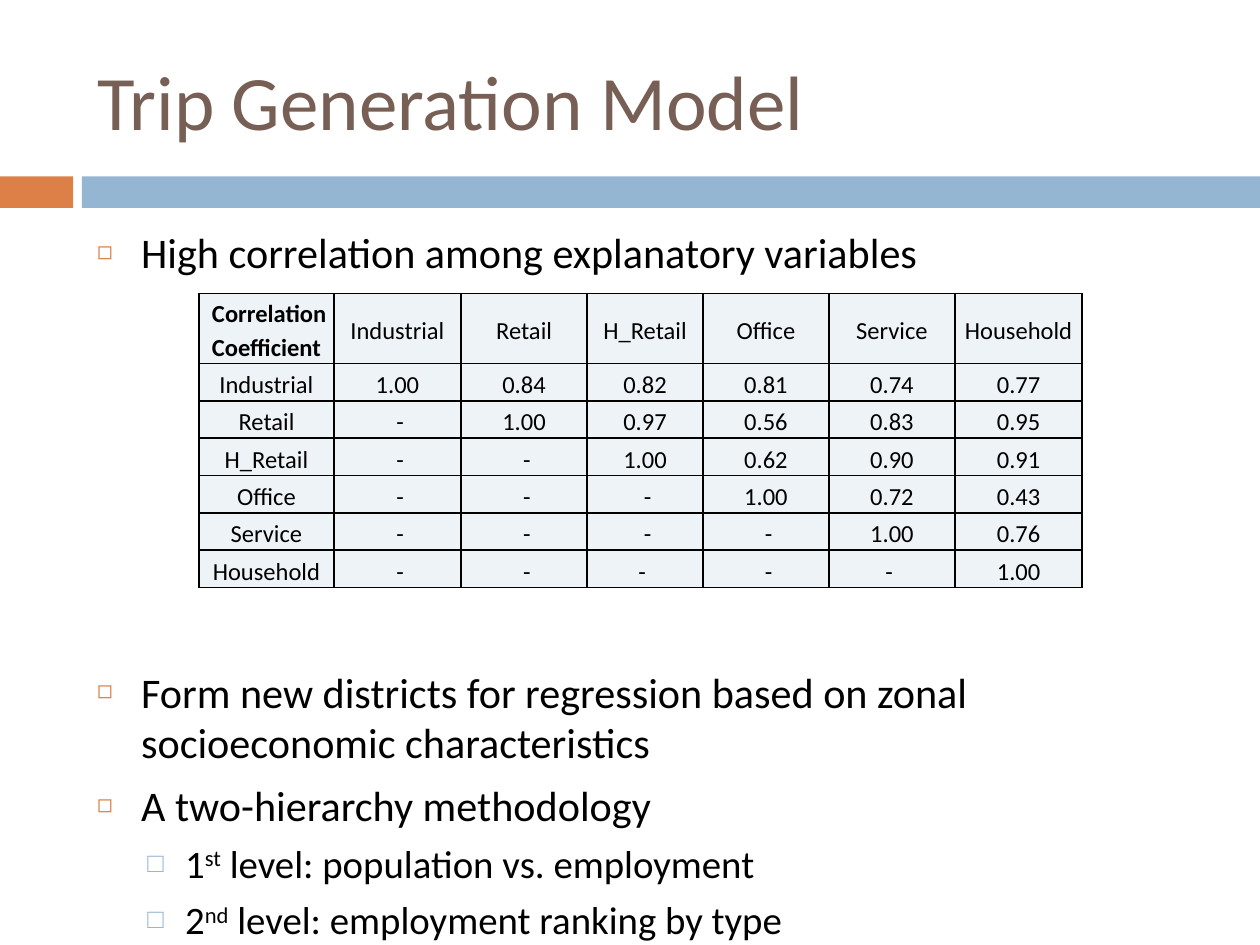
"""Build the trip generation slide with its correlation table and bullet list."""
from dataclasses import dataclass
from typing import Any, NamedTuple

from lxml.etree import SubElement
from pptx import Presentation
from pptx.dml.color import RGBColor
from pptx.enum.shapes import MSO_SHAPE
from pptx.enum.text import MSO_ANCHOR, MSO_AUTO_SIZE, PP_ALIGN
from pptx.oxml.ns import qn
from pptx.util import Inches, Pt


@dataclass(frozen=True)
class Theme:
    font: str = "Calibri"
    title: str = "775F55"
    text: str = "000000"
    orange: str = "DD8047"
    blue: str = "94B6D2"
    cell: str = "EEF3F7"
    title_size: float = 44
    item_size: float = 24.1
    subitem_size: float = 22.2
    table_size: float = 14


class Box(NamedTuple):
    column: float
    row: float
    columns: float
    rows: float


class Bar(NamedTuple):
    box: Box
    color: str


class Level(NamedTuple):
    depth: int
    size: float
    indent: float
    hanging: float
    bullet: str
    color: str
    bullet_share: int


class Item(NamedTuple):
    level: Level
    wording: tuple[str, ...]
    before: float


THEME = Theme()
UNIT = Inches(0.1)
SLIDE_COLUMNS, SLIDE_ROWS = 100, 75
TITLE_BOX = Box(6.7, 2.5, 89.2, 10.8)
BODY_BOX = Box(6.7, 17.5, 89.2, 54.2)
TABLE_BOX = Box(15.8, 23.3, 70.1, 23.3)
BARS = (Bar(Box(0, 14, 5.8, 2.5), THEME.orange), Bar(Box(6.5, 14, 93.5, 2.5), THEME.blue))

MAIN = Level(0, THEME.item_size, 0.35, 0.35, "◻", THEME.orange, 60)
SUB = Level(1, THEME.subitem_size, 0.7, 0.3, "□", THEME.blue, 70)
TABLE_GAP = 222
ITEMS = (
    Item(MAIN, ("High correlation among explanatory variables",), 7),
    Item(MAIN, ("Form new districts for regression based on zonal socioeconomic characteristics",), TABLE_GAP),
    Item(MAIN, ("A two-hierarchy methodology",), 7),
    Item(SUB, ("1", "st", " level: population vs. employment"), 5.5),
    Item(SUB, ("2", "nd", " level: employment ranking by type"), 5.5),
)

COLUMN_WIDTHS = (10.7, 10.1, 10, 9.2, 10, 10, 10.1)
HEADER_HEIGHT = 5.5
CORRELATIONS = (
    " Correlation Coefficient|Industrial|Retail|H_Retail|Office|Service|Household",
    "Industrial|1.00|0.84|0.82|0.81|0.74|0.77",
    "Retail| -|1.00|0.97|0.56|0.83|0.95",
    "H_Retail| -| -|1.00|0.62|0.90|0.91",
    "Office| -| -| -|1.00|0.72|0.43",
    "Service| -| -| -| -|1.00|0.76",
    "Household| -| -|- | -|- |1.00",
)


def units(count: float) -> int:
    """Convert grid units to a length."""
    return round(count * UNIT)


def apply_format(target: Any, values: dict[str, Any]) -> None:
    """Set each named attribute on the target."""
    for name, value in values.items():
        setattr(target, name, value)


def place(shape: Any, box: Box) -> None:
    """Move a shape to its grid box."""
    apply_format(shape, dict(zip(("left", "top", "width", "height"), map(units, box))))


def add_span(para: Any, text: str, size: float, color: str, bold: bool = False) -> Any:
    """Add a formatted run to a paragraph."""
    span = para.add_run()
    span.text = text
    apply_format(span.font, {"name": THEME.font, "size": Pt(size), "bold": bold})
    span.font.color.rgb = RGBColor.from_string(color)
    return span


def draw_bar(page: Any, bar: Bar) -> None:
    """Draw a plain coloured bar."""
    shape = page.shapes.add_shape(MSO_SHAPE.RECTANGLE, *map(units, bar.box))
    shape.shadow.inherit = False
    shape.fill.solid()
    shape.fill.fore_color.rgb = RGBColor.from_string(bar.color)
    shape.line.fill.background()


def write_title(page: Any, text: str) -> None:
    """Place and fill the title."""
    title = page.shapes.title
    place(title, TITLE_BOX)
    apply_format(title.text_frame, {"vertical_anchor": MSO_ANCHOR.MIDDLE, "auto_size": MSO_AUTO_SIZE.NONE})
    para = title.text_frame.paragraphs[0]
    para.alignment = PP_ALIGN.LEFT
    add_span(para, text, THEME.title_size, THEME.title)


def set_bullet(para: Any, level: Level) -> None:
    """Give a paragraph its bullet and hanging indent."""
    properties = para._p.get_or_add_pPr()
    properties.set("marL", str(Inches(level.indent)))
    properties.set("indent", str(-Inches(level.hanging)))
    color = SubElement(properties, qn("a:buClr"))
    SubElement(color, qn("a:srgbClr"), val=level.color)
    SubElement(properties, qn("a:buSzPct"), val=str(level.bullet_share * 1000))
    SubElement(properties, qn("a:buChar"), char=level.bullet)


def write_list(page: Any, items: tuple[Item, ...]) -> None:
    """Place the body and write its bulleted items."""
    body = page.placeholders[1]
    place(body, BODY_BOX)
    frame = body.text_frame
    apply_format(frame, {"vertical_anchor": MSO_ANCHOR.TOP, "auto_size": MSO_AUTO_SIZE.NONE})
    for index, item in enumerate(items):
        para = frame.add_paragraph() if index else frame.paragraphs[0]
        apply_format(para, {"level": item.level.depth, "space_before": Pt(item.before)})
        set_bullet(para, item.level)
        for position, text in enumerate(item.wording):
            span = add_span(para, text, item.level.size, THEME.text)
            if position == 1:
                span._r.get_or_add_rPr().set("baseline", "30000")


def format_cell(cell: Any, text: str, bold: bool) -> None:
    """Write one bordered and filled table cell."""
    margin = Inches(0.01)
    apply_format(cell, {"margin_left": margin, "margin_right": margin, "margin_top": margin,
                        "margin_bottom": 0, "vertical_anchor": MSO_ANCHOR.MIDDLE})
    properties = cell._tc.get_or_add_tcPr()
    for side in ("lnL", "lnR", "lnT", "lnB"):
        border = SubElement(properties, qn(f"a:{side}"), w=str(Pt(1)))
        SubElement(SubElement(border, qn("a:solidFill")), qn("a:srgbClr"), val=THEME.text)
    cell.fill.solid()
    cell.fill.fore_color.rgb = RGBColor.from_string(THEME.cell)
    para = cell.text_frame.paragraphs[0]
    apply_format(para, {"alignment": PP_ALIGN.CENTER, "line_spacing": 1.15})
    add_span(para, text, THEME.table_size, THEME.text, bold)


def draw_table(page: Any, lines: tuple[str, ...]) -> None:
    """Draw the correlation table."""
    table = page.shapes.add_table(len(lines), len(COLUMN_WIDTHS), *map(units, TABLE_BOX)).table
    for column, width in zip(table.columns, COLUMN_WIDTHS):
        column.width = units(width)
    row_height = (TABLE_BOX.rows - HEADER_HEIGHT) / (len(lines) - 1)
    for row_index, line in enumerate(lines):
        table.rows[row_index].height = units(row_height if row_index else HEADER_HEIGHT)
        for column_index, text in enumerate(line.split("|")):
            format_cell(table.cell(row_index, column_index), text, row_index == column_index == 0)


def main() -> None:
    """Build and save the deck."""
    deck = Presentation()
    apply_format(deck, {"slide_width": units(SLIDE_COLUMNS), "slide_height": units(SLIDE_ROWS)})
    page = deck.slides.add_slide(deck.slide_layouts[1])
    for bar in BARS:
        draw_bar(page, bar)
    write_title(page, "Trip Generation Model")
    write_list(page, ITEMS)
    draw_table(page, CORRELATIONS)
    deck.save("out.pptx")


if __name__ == "__main__":
    main()
